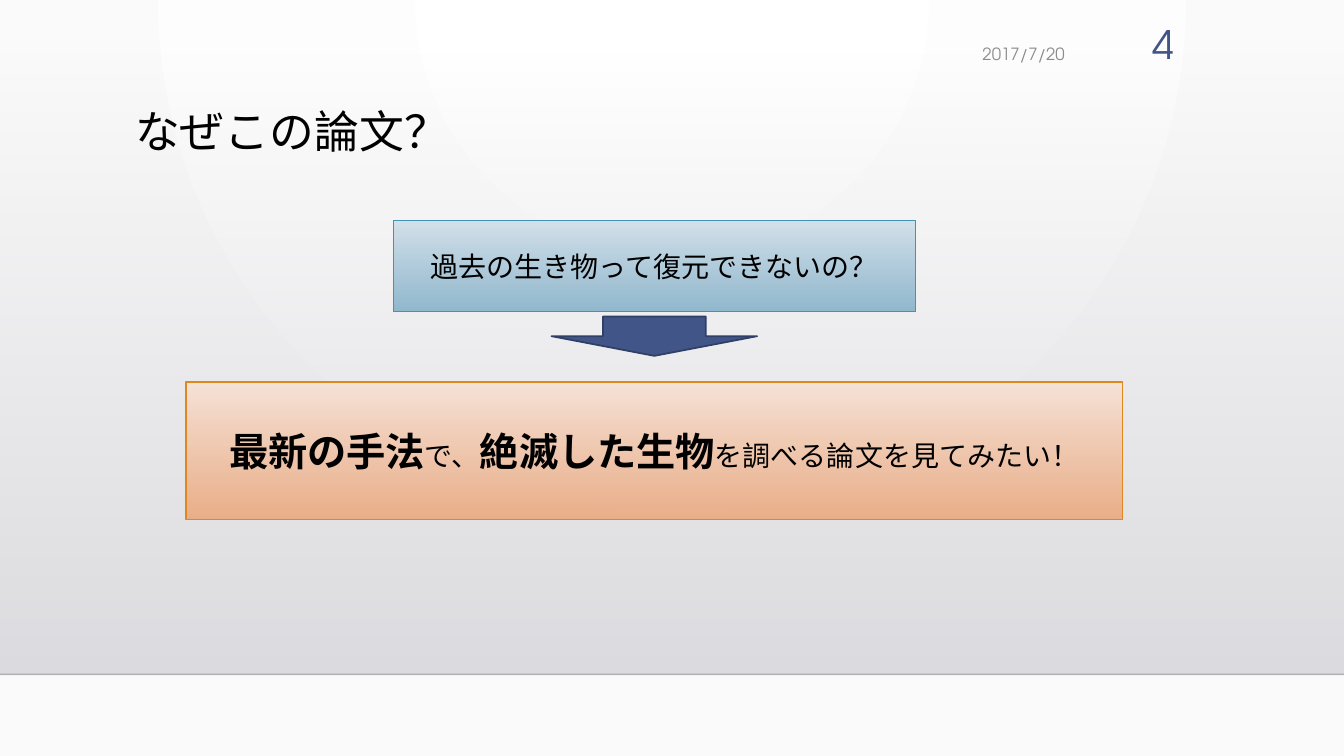
from lxml import etree
from pptx import Presentation
from pptx import util as u
from pptx.dml.color import RGBColor
from pptx.enum import shapes, text
from pptx.oxml.ns import qn

FONT = "TeX Gyre Adventor"
WIDE, HIGH, AXIS = 13.33, 7.5, 6.49
BACK = [("FFFFFF", 100), ("FAFAFA", 100)]
PANEL = {"top": 0.51, "high": 6.18, "stops": [("DCDCE0", 0), ("DEDEE2", 100)]}
TITLE = "なぜこの論文？"
BOXES = [
    {"top": 2.19, "wide": 5.18, "high": 0.9, "line": "4294B6",
     "stops": [("D4E1EA", 100), ("8AB4CC", 92)],
     "runs": [("過去の生き物って復元できないの？", 20, False)]},
    {"top": 3.79, "wide": 9.29, "high": 1.36, "line": "DF8822",
     "stops": [("F7E3D8", 100), ("EBAB82", 92)],
     "runs": [("最新の手法", 28, True), ("で、", 20, False),
              ("絶滅した生物", 28, True), ("を調べる論文を見てみたい！", 20, False)]},
]
ARROW = {"top": 3.14, "wide": 2.04, "high": 0.39}
NOTES = [
    ("2017/7/20", (7.91, 0.36, 2.75, 0.34), 12, "8C8C8C", text.MSO_ANCHOR.MIDDLE),
    ("4", (10.85, 0.15, 0.89, 0.55), 28, "415588", text.MSO_ANCHOR.TOP),
]


def hue(code):
    return RGBColor.from_string(code)


def place(*sizes):
    return [u.Inches(size) for size in sizes]


def fade(node, share):
    """Set the opacity, in percent, of the first plain colour inside node."""
    if share < 100:
        color = node.find(".//" + qn("a:srgbClr"))
        etree.SubElement(color, qn("a:alpha")).set("val", str(share * 1000))


def blend(fill, node, stops):
    """Fill with a top-to-bottom gradient; node is the XML that holds it."""
    fill.gradient()
    fill.gradient_angle = 270
    for stop, (code, _) in zip(fill.gradient_stops, stops):
        stop.color.rgb = hue(code)
    for part, (_, share) in zip(node.iter(qn("a:gs")), stops):
        fade(part, share)


def write(frame, runs, align, anchor, color="000000"):
    frame.word_wrap = True
    frame.vertical_anchor = anchor
    para = frame.paragraphs[0]
    para.alignment = align
    for words, size, bold in runs:
        run = para.add_run()
        run.text = words
        form = {"name": FONT, "size": u.Pt(size), "bold": bold}
        for key, value in form.items():
            setattr(run.font, key, value)
        run.font.color.rgb = hue(color)
    return para


def draw(slide, kind, spot, line=None, weight=0.75):
    shape = slide.shapes.add_shape(kind, *place(*spot))
    shape.shadow.inherit = False
    if line:
        shape.line.color.rgb = hue(line)
        shape.line.width = u.Pt(weight)
    else:
        shape.line.fill.background()
    return shape


def center(item):
    return AXIS - item["wide"] / 2, item["top"], item["wide"], item["high"]


def backdrop(slide):
    blend(slide.background.fill, slide.element, BACK)
    lin = slide.element.find(".//" + qn("a:lin"))
    ring = etree.Element(qn("a:path"))
    ring.set("path", "circle")
    rect = etree.SubElement(ring, qn("a:fillToRect"))
    for side, share in {"l": 43, "t": 0, "r": 43, "b": 100}.items():
        rect.set(side, str(share * 1000))
    lin.getparent().replace(lin, ring)

    panel = draw(slide, shapes.MSO_SHAPE.RECTANGLE,
                 (0, PANEL["top"], WIDE, PANEL["high"]))
    blend(panel.fill, panel.element, PANEL["stops"])
    edge = PANEL["top"] + PANEL["high"]
    rule = slide.shapes.add_connector(
        shapes.MSO_CONNECTOR.STRAIGHT, *place(0, edge, WIDE, edge))
    rule.line.color.rgb = hue("000001")
    rule.line.width = u.Pt(1)
    fade(rule.element, 20)
    etree.SubElement(rule.element.spPr, qn("a:effectLst"))


def main():
    deck = Presentation()
    deck.slide_width, deck.slide_height = place(WIDE, HIGH)
    slide = deck.slides.add_slide(deck.slide_layouts[5])
    backdrop(slide)

    title = slide.shapes.title
    title.left, title.top, title.width, title.height = place(1.24, 1.04, 10.5, 1.15)
    para = write(title.text_frame, [(TITLE, 32, False)],
                 text.PP_ALIGN.LEFT, text.MSO_ANCHOR.TOP)
    para.line_spacing = 0.9
    # Bring the title in front of the backdrop.
    slide.shapes.element.append(title.element)

    for box in BOXES:
        shape = draw(slide, shapes.MSO_SHAPE.RECTANGLE, center(box), box["line"])
        blend(shape.fill, shape.element, box["stops"])
        write(shape.text_frame, box["runs"], text.PP_ALIGN.CENTER,
              text.MSO_ANCHOR.MIDDLE)

    arrow = draw(slide, shapes.MSO_SHAPE.DOWN_ARROW, center(ARROW), "303F65", 1.25)
    arrow.fill.solid()
    arrow.fill.fore_color.rgb = hue("415588")

    for words, spot, size, color, anchor in NOTES:
        note = slide.shapes.add_textbox(*place(*spot))
        write(note.text_frame, [(words, size, False)], text.PP_ALIGN.RIGHT,
              anchor, color)

    deck.save("out.pptx")


if __name__ == "__main__":
    main()
